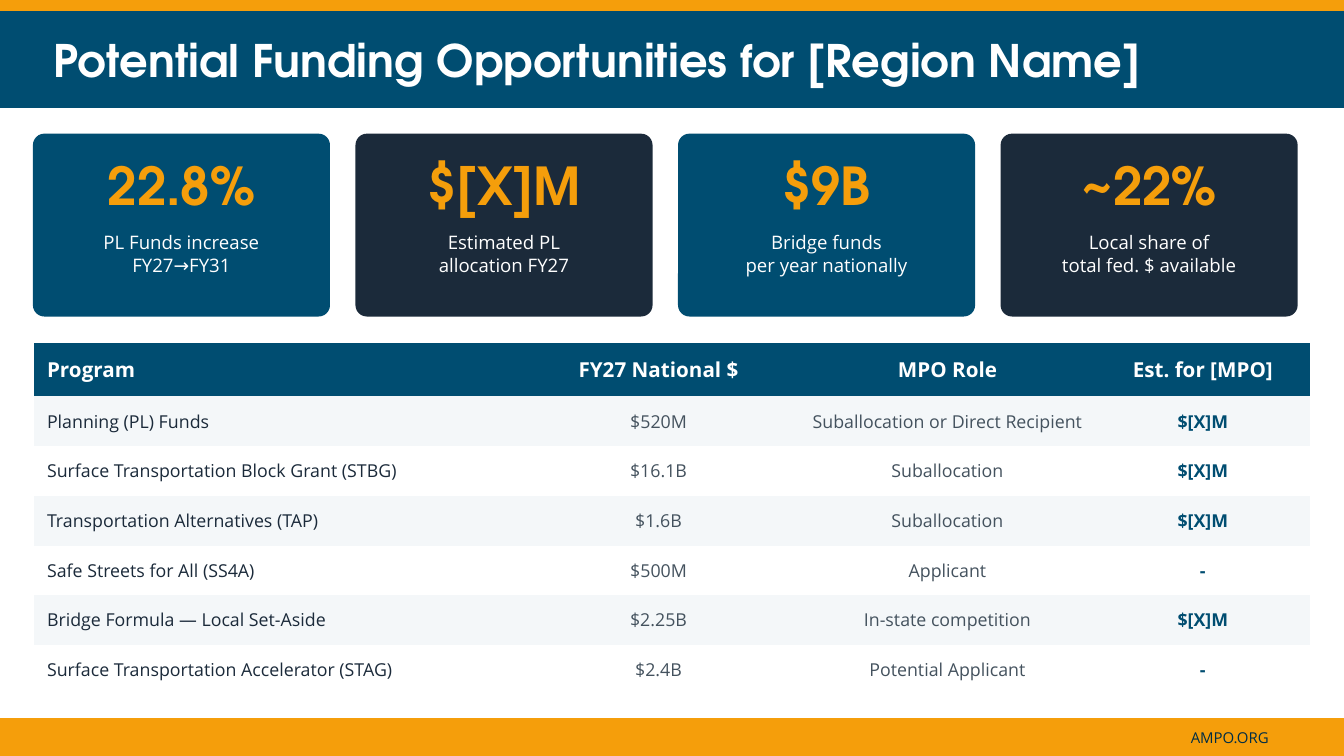
from pptx import Presentation
from pptx.dml.color import RGBColor
from pptx.enum.shapes import MSO_SHAPE
from pptx.enum.text import MSO_ANCHOR, MSO_AUTO_SIZE, PP_ALIGN
from pptx.oxml.ns import qn
from pptx.util import Pt

COLORS = {
    "amber": "F59E0B", "blue": "004D71", "navy": "1B2A3A", "white": "FFFFFF",
    "stripe": "F4F7F9", "gray": "44525E", "footer": "002D45",
}
HEADING_FONT = "TeX Gyre Adventor"
BODY_FONT = "Open Sans"
NO_GRID_STYLE = "{2D5ABB26-0587-4C30-8999-92F81FD0307C}"

CARDS = [
    ("22.8%", "PL Funds increase\nFY27→FY31"),
    ("$[X]M", "Estimated PL\nallocation FY27"),
    ("$9B", "Bridge funds\nper year nationally"),
    ("~22%", "Local share of\ntotal fed. $ available"),
]
COLUMN_WIDTHS = [345.6, 201.6, 211.2, 153.6]
COLUMN_COLORS = ["navy", "gray", "gray", "blue"]
PROGRAMS = [
    ("Program", "FY27 National $", "MPO Role", "Est. for [MPO]"),
    ("Planning (PL) Funds", "$520M", "Suballocation or Direct Recipient", "$[X]M"),
    ("Surface Transportation Block Grant (STBG)", "$16.1B", "Suballocation", "$[X]M"),
    ("Transportation Alternatives (TAP)", "$1.6B", "Suballocation", "$[X]M"),
    ("Safe Streets for All (SS4A)", "$500M", "Applicant", "-"),
    ("Bridge Formula — Local Set-Aside", "$2.25B", "In-state competition", "$[X]M"),
    ("Surface Transportation Accelerator (STAG)", "$2.4B", "Potential Applicant", "-"),
]


def rgb(name):
    """Return the named palette color."""
    return RGBColor.from_string(COLORS[name])


def paint(shape, color):
    """Give a shape a fill and a matching outline."""
    shape.fill.solid()
    shape.fill.fore_color.rgb = rgb(color)
    shape.line.color.rgb = rgb(color)
    shape.line.width = Pt(1)


def write(frame, text, size, color, font=BODY_FONT, bold=False, align=PP_ALIGN.CENTER):
    """Fill a text frame with evenly styled paragraphs."""
    frame.text = text
    for paragraph in frame.paragraphs:
        paragraph.alignment = align
        paragraph.font.size = Pt(size)
        paragraph.font.name = font
        paragraph.font.bold = bold
        paragraph.font.color.rgb = rgb(color)


def set_margins(target, left=0):
    """Clear the margins of a text frame or cell except for the left one."""
    target.margin_left = Pt(left)
    target.margin_right = target.margin_top = target.margin_bottom = 0


def add_block(page, box, color, kind=MSO_SHAPE.RECTANGLE):
    """Draw a plain colored shape in the box."""
    block = page.shapes.add_shape(kind, *map(Pt, box))
    block.shadow.inherit = False
    paint(block, color)
    return block


def add_text(page, box, text, size, color, anchor=MSO_ANCHOR.MIDDLE, **style):
    """Place a wrapped text box without margins."""
    frame = page.shapes.add_textbox(*map(Pt, box)).text_frame
    frame.word_wrap = True
    frame.vertical_anchor = anchor
    set_margins(frame)
    write(frame, text, size, color, **style)


def add_header(page, box):
    """Place the title band below its amber strip."""
    left, top, width, height = box
    strip = 7.7
    title = page.shapes.title
    title.left, title.top = Pt(left), Pt(top + strip)
    title.width, title.height = Pt(width), Pt(height - strip)
    paint(title, "blue")
    frame = title.text_frame
    frame.auto_size = MSO_AUTO_SIZE.NONE
    frame.vertical_anchor = MSO_ANCHOR.MIDDLE
    set_margins(frame, 38.4)
    write(frame, "Potential Funding Opportunities for [Region Name]", 32, "white",
          font=HEADING_FONT, bold=True, align=PP_ALIGN.LEFT)
    add_block(page, (left, top, width, strip), "amber")


def add_card(page, box, value, label, color):
    """Draw one key figure with its label."""
    left, top, width, height = box
    card = add_block(page, box, color, MSO_SHAPE.ROUNDED_RECTANGLE)
    card.adjustments[0] = 0.059
    add_text(page, (left, top + 4.8, width, 62.4), value, 37.3, "amber",
             font=HEADING_FONT, bold=True)
    add_text(page, (left, top + 69.1, width, 52.8), label, 13.3, "white",
             anchor=MSO_ANCHOR.TOP)


def add_cards(page, box):
    """Lay the key figures out in a row of equal cards."""
    left, top, width, height = box
    gap = 19.2
    card_width = (width - gap * (len(CARDS) - 1)) / len(CARDS)
    for index, (value, label) in enumerate(CARDS):
        card_left = left + index * (card_width + gap)
        add_card(page, (card_left, top, card_width, height), value, label,
                 ("blue", "navy")[index % 2])


def add_programs(page, box):
    """Build the table of funding programs."""
    left, top, width, height = box
    header_height = 38.4
    row_height = (height - header_height) / (len(PROGRAMS) - 1)
    holder = page.shapes.add_table(len(PROGRAMS), len(COLUMN_WIDTHS), *map(Pt, box))
    holder.element.find(".//" + qn("a:tableStyleId")).text = NO_GRID_STYLE
    table = holder.table
    table.horz_banding = False
    for column, column_width in zip(table.columns, COLUMN_WIDTHS):
        column.width = Pt(column_width)
    for row_index, values in enumerate(PROGRAMS):
        is_header = row_index == 0
        table.rows[row_index].height = Pt(header_height if is_header else row_height)
        fill = "blue" if is_header else ("white", "stripe")[row_index % 2]
        for column_index, value in enumerate(values):
            is_first = column_index == 0
            cell = table.cell(row_index, column_index)
            cell.fill.solid()
            cell.fill.fore_color.rgb = rgb(fill)
            cell.vertical_anchor = MSO_ANCHOR.MIDDLE
            set_margins(cell, 9.6 if is_first else 0)
            write(cell.text_frame, value, 14.7 if is_header else 12.7,
                  "white" if is_header else COLUMN_COLORS[column_index],
                  bold=is_header or column_index == len(values) - 1,
                  align=PP_ALIGN.LEFT if is_first else PP_ALIGN.CENTER)


def add_footer(page, box):
    """Draw the amber footer with the web address."""
    left, top, width, height = box
    add_block(page, box, "amber")
    add_text(page, (left + width - 144, top, 124.8, height), "AMPO.ORG", 10.7, "footer")


def main():
    """Build and save the deck."""
    deck = Presentation()
    deck.slide_width, deck.slide_height = Pt(960), Pt(540)
    page = deck.slides.add_slide(deck.slide_layouts[5])
    add_header(page, (0, 0, 960, 76.8))
    add_cards(page, (24, 96, 902.4, 129.6))
    add_programs(page, (24, 244.8, 912, 251.5))
    add_footer(page, (0, 513.6, 960, 26.4))
    deck.save("out.pptx")


if __name__ == "__main__":
    main()
